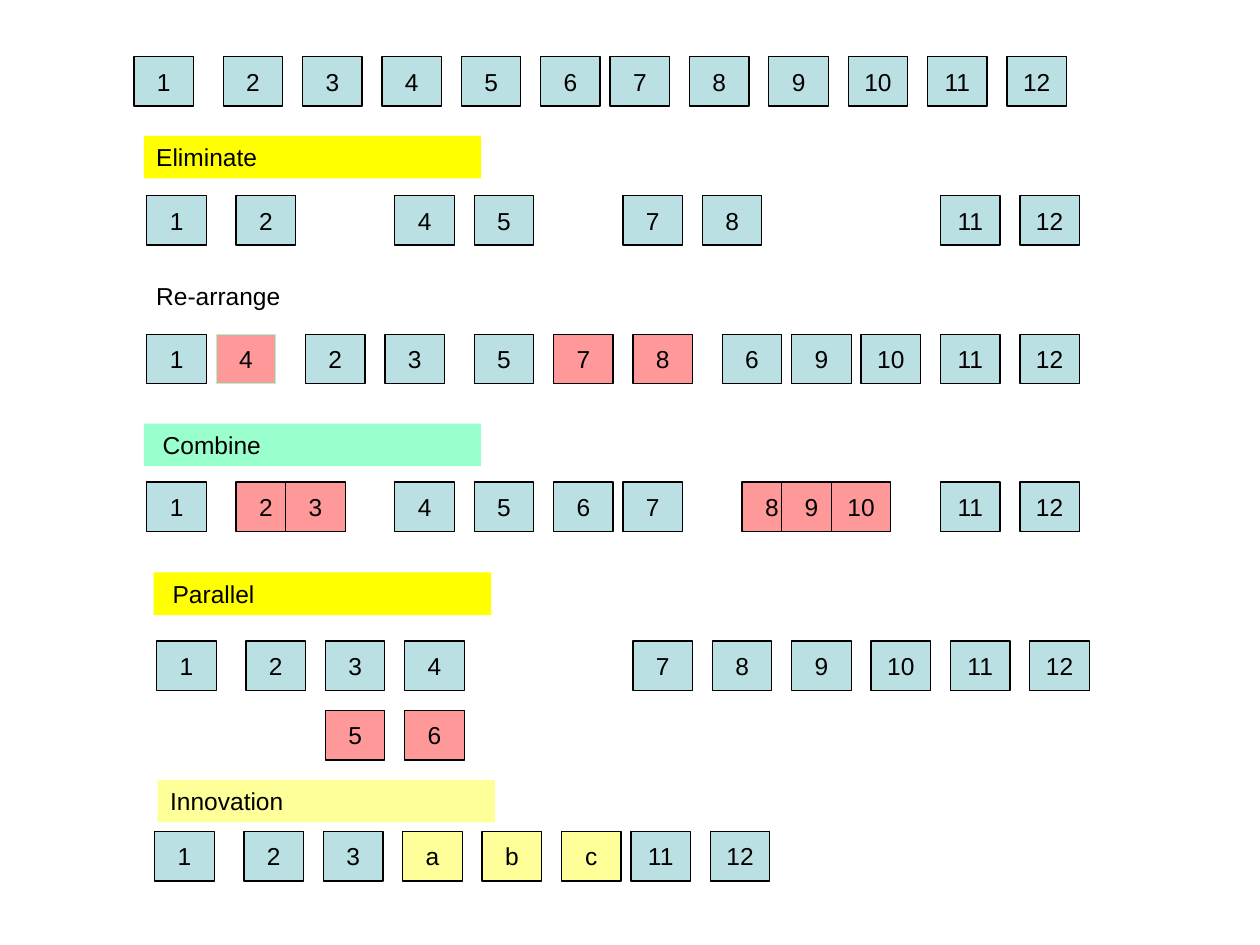
from pptx import Presentation
from pptx import util as u
from pptx.dml.color import RGBColor
from pptx.enum import shapes, text

COLORS = {
    "step": "BBE0E3",
    "changed": "FF9999",
    "new": "FFFF99",
    "yellow": "FFFF00",
    "mint": "99FFCC",
    "white": "FFFFFF",
    "black": "000000",
}

presentation = Presentation()
presentation.slide_width = u.Inches(10)
presentation.slide_height = u.Inches(7.5)
slide = presentation.slides.add_slide(presentation.slide_layouts[6])

GRID = presentation.slide_width / 127
STEP_WIDTH, STEP_HEIGHT = 6, 5
LABEL_WIDTH, LABEL_HEIGHT = 34, 4.3
COLUMNS = dict(zip(range(1, 13), (0, 9, 17, 25, 33, 41, 48, 56, 64, 72, 80, 88)))


def add_box(words, left, top, width, height, fill):
    corner_and_size = [round(GRID * length) for length in (left, top, width, height)]
    shape = slide.shapes.add_shape(shapes.MSO_SHAPE.RECTANGLE, *corner_and_size)
    shape.shadow.inherit = False
    shape.fill.solid()
    shape.fill.fore_color.rgb = RGBColor.from_string(COLORS[fill])
    shape.line.fill.background()
    paragraph = shape.text_frame.paragraphs[0]
    paragraph.text = str(words)
    paragraph.font.name = "Arial"
    paragraph.font.size = u.Pt(14)
    paragraph.font.color.rgb = RGBColor.from_string(COLORS["black"])
    return shape


# left, top, steps in order, columns that differ, changed steps
rows = [
    (13.5, 5.7, range(1, 13), {}, ()),
    (14.8, 19.7, (1, 2, 4, 5, 7, 8, 11, 12), {}, ()),
    (14.8, 33.7, (1, 4, 2, 3, 5, 7, 8, 6, 9, 10, 11, 12),
     {4: 7, 2: 16, 3: 24, 7: 41, 8: 49, 6: 58, 9: 65}, (4, 7, 8)),
    (14.8, 48.6, range(1, 13), {3: 14, 8: 60, 10: 69}, (2, 3, 8, 9, 10)),
    (15.8, 64.6, (1, 2, 3, 4, 7, 8, 9, 10, 11, 12), {}, ()),
    (15.8, 71.6, (5, 6), {5: 17, 6: 25}, (5, 6)),
    (15.6, 83.8, (1, 2, 3, "a", "b", "c", 11, 12),
     {"a": 25, "b": 33, "c": 41, 11: 48, 12: 56}, ()),
]
for row_number, (left, top, steps, moved, changed) in enumerate(rows):
    columns = COLUMNS | moved
    for step in steps:
        fill = "new" if step in ("a", "b", "c") else "changed" if step in changed else "step"
        shape = add_box(step, left + columns[step], top, STEP_WIDTH, STEP_HEIGHT, fill)
        outline = "mint" if (row_number, step) == (2, 4) else "black"
        shape.line.color.rgb = RGBColor.from_string(COLORS[outline])
        shape.line.width = u.Pt(0.75)
        shape.text_frame.word_wrap = False
        shape.text_frame.vertical_anchor = text.MSO_ANCHOR.MIDDLE
        shape.text_frame.paragraphs[0].alignment = text.PP_ALIGN.CENTER

labels = [
    ("Eliminate", 14.5, 13.7, "yellow", 0.1),
    ("Re-arrange", 14.5, 27.7, "white", 0.1),
    ("Combine", 14.5, 42.7, "mint", 0.15),
    ("Parallel", 15.5, 57.7, "yellow", 0.15),
    ("Innovation", 15.9, 78.6, "new", 0.1),
]
for words, left, top, fill, inset in labels:
    shape = add_box(words, left, top, LABEL_WIDTH, LABEL_HEIGHT, fill)
    frame = shape.text_frame
    frame.word_wrap = True
    frame.auto_size = text.MSO_AUTO_SIZE.SHAPE_TO_FIT_TEXT
    frame.vertical_anchor = text.MSO_ANCHOR.TOP
    frame.margin_left = u.Inches(inset)
    frame.paragraphs[0].alignment = text.PP_ALIGN.LEFT

presentation.save("out.pptx")
